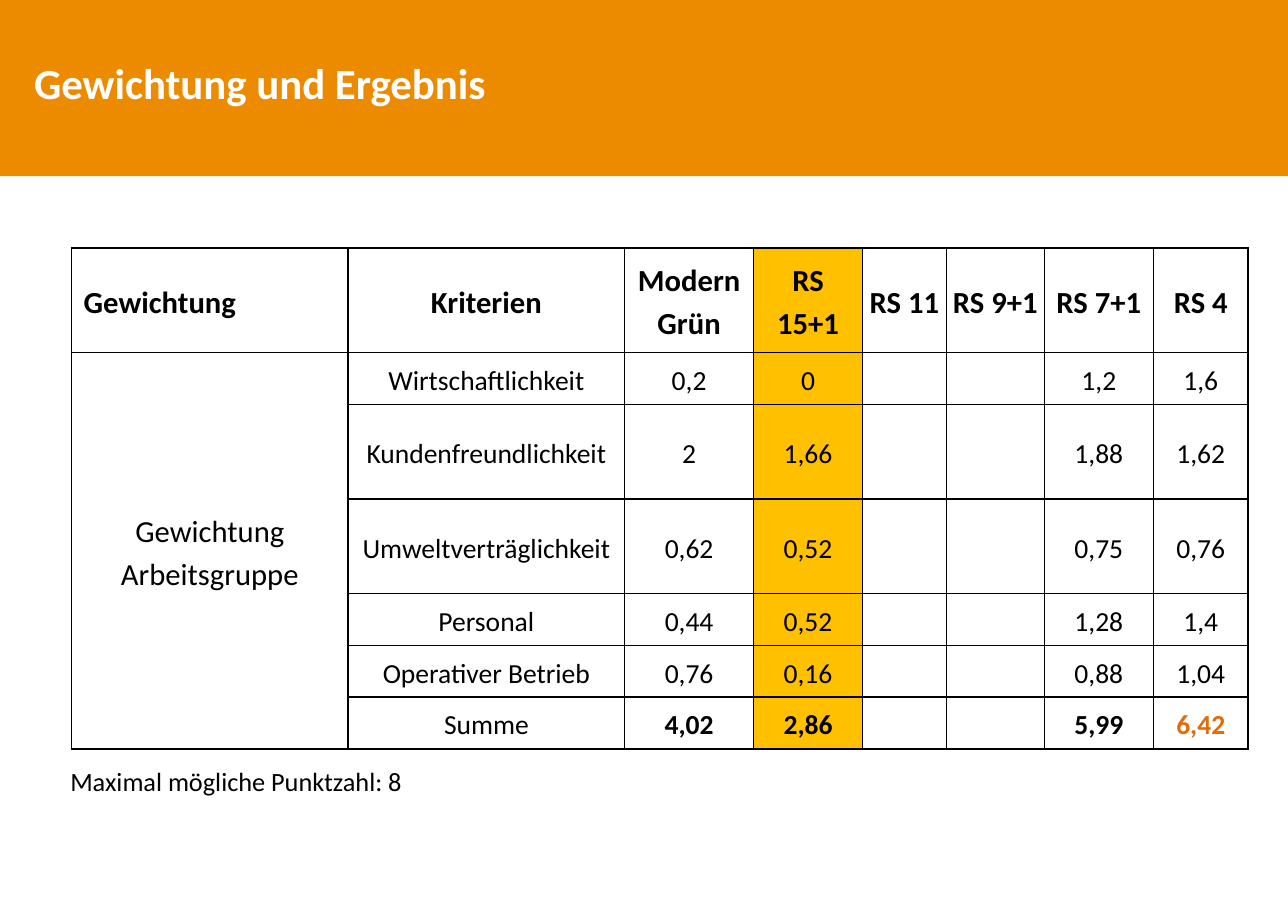
from lxml import etree
from pptx import Presentation
from pptx import util as u
from pptx.dml import color
from pptx.enum import shapes, text
from pptx.oxml import ns

COLORS = {
    "banner": "ED8B00",
    "white": "FFFFFF",
    "black": "000000",
    "highlight": "FFC000",
    "best": "E36C0A",
}
FONT = "Calibri"
COLUMN_WIDTHS = [2.51, 2.51, 1.17, 0.99, 0.76, 0.89, 0.99, 0.86]
ROW_HEIGHTS = [0.95, 0.47, 0.86, 0.86, 0.47, 0.47, 0.47]
HIGHLIGHT_COLUMN = 3
ROWS = [
    ["Gewichtung", "Kriterien", "Modern\nGrün", "RS 15+1", "RS 11", "RS 9+1", "RS 7+1", "RS 4"],
    ["Gewichtung Arbeitsgruppe", "Wirtschaftlichkeit", "0,2", "0", "", "", "1,2", "1,6"],
    ["", "Kundenfreundlichkeit", "2", "1,66", "", "", "1,88", "1,62"],
    ["", "Umweltverträglichkeit", "0,62", "0,52", "", "", "0,75", "0,76"],
    ["", "Personal", "0,44", "0,52", "", "", "1,28", "1,4"],
    ["", "Operativer Betrieb", "0,76", "0,16", "", "", "0,88", "1,04"],
    ["", "Summe", "4,02", "2,86", "", "", "5,99", "6,42"],
]


def rgb(name):
    return color.RGBColor.from_string(COLORS[name])


def format_text(text_frame, size, color_name="black", bold=False, align=None, spacing=None):
    for paragraph in text_frame.paragraphs:
        paragraph.alignment = align
        paragraph.line_spacing = spacing
        for run in paragraph.runs:
            run.font.name = FONT
            run.font.size = u.Pt(size)
            run.font.bold = bold
            run.font.color.rgb = rgb(color_name)


def add_banner(slide):
    banner = slide.shapes.add_shape(
        shapes.MSO_SHAPE.RECTANGLE, 0, 0, u.Inches(11.69), u.Inches(1.6))
    banner.shadow.inherit = False
    banner.fill.solid()
    banner.fill.fore_color.rgb = rgb("banner")
    banner.line.fill.background()
    slide.shapes.title.element.addprevious(banner.element)


def set_title(slide, words):
    title = slide.shapes.title
    title.left, title.top = u.Inches(0.31), u.Inches(0.31)
    title.width, title.height = u.Inches(6.67), u.Inches(0.94)
    frame = title.text_frame
    frame.text = words
    frame.auto_size = text.MSO_AUTO_SIZE.NONE
    frame.word_wrap = True
    frame.vertical_anchor = text.MSO_ANCHOR.MIDDLE
    frame.margin_left = 0
    format_text(frame, 28, "white", True, text.PP_ALIGN.LEFT, 0.9)


def add_borders(cell):
    properties = cell._tc.get_or_add_tcPr()
    for side in ("L", "R", "T", "B"):
        line = etree.SubElement(properties, ns.qn(f"a:ln{side}"), w=str(u.Pt(1)))
        fill = etree.SubElement(line, ns.qn("a:solidFill"))
        etree.SubElement(fill, ns.qn("a:srgbClr"), val=COLORS["black"])


def fill_cell(cell, words, row, column):
    add_borders(cell)
    cell.fill.solid()
    cell.fill.fore_color.rgb = rgb("highlight" if column == HIGHLIGHT_COLUMN else "white")
    cell.vertical_anchor = text.MSO_ANCHOR.MIDDLE
    cell.margin_left = u.Inches(0.11 if row == column == 0 else 0.05)
    cell.margin_right = u.Inches(0.05)
    cell.margin_top = cell.margin_bottom = 0
    cell.text_frame.text = words
    last_row = row == len(ROWS) - 1
    best = last_row and column == len(COLUMN_WIDTHS) - 1
    format_text(
        cell.text_frame,
        size=20 if row == 0 or column == 0 else 18,
        color_name="best" if best else "black",
        bold=row == 0 or (last_row and column > 1),
        align=text.PP_ALIGN.LEFT if row == column == 0 else text.PP_ALIGN.CENTER,
        spacing=1.15,
    )


def add_score_table(slide):
    table = slide.shapes.add_table(
        len(ROWS), len(COLUMN_WIDTHS), u.Inches(0.65), u.Inches(2.25),
        u.Inches(sum(COLUMN_WIDTHS)), u.Inches(sum(ROW_HEIGHTS))).table
    table.first_row = False
    table.horz_banding = False
    for column, width in zip(table.columns, COLUMN_WIDTHS):
        column.width = u.Inches(width)
    for row, height in zip(table.rows, ROW_HEIGHTS):
        row.height = u.Inches(height)
    for row, values in enumerate(ROWS):
        for column, words in enumerate(values):
            fill_cell(table.cell(row, column), words, row, column)
    table.cell(1, 0).merge(table.cell(len(ROWS) - 1, 0))


def add_note(slide, words):
    note = slide.shapes.add_textbox(
        u.Inches(0.54), u.Inches(6.9), u.Inches(3.26), u.Inches(0.39))
    frame = note.text_frame
    frame.text = words
    frame.word_wrap = False
    frame.auto_size = text.MSO_AUTO_SIZE.SHAPE_TO_FIT_TEXT
    format_text(frame, 17.2)


def main():
    presentation = Presentation()
    presentation.slide_width = u.Inches(11.69)
    presentation.slide_height = u.Inches(8.27)
    slide = presentation.slides.add_slide(presentation.slide_layouts[5])
    add_banner(slide)
    set_title(slide, "Gewichtung und Ergebnis")
    add_score_table(slide)
    add_note(slide, "Maximal mögliche Punktzahl: 8")
    presentation.save("out.pptx")


if __name__ == "__main__":
    main()
